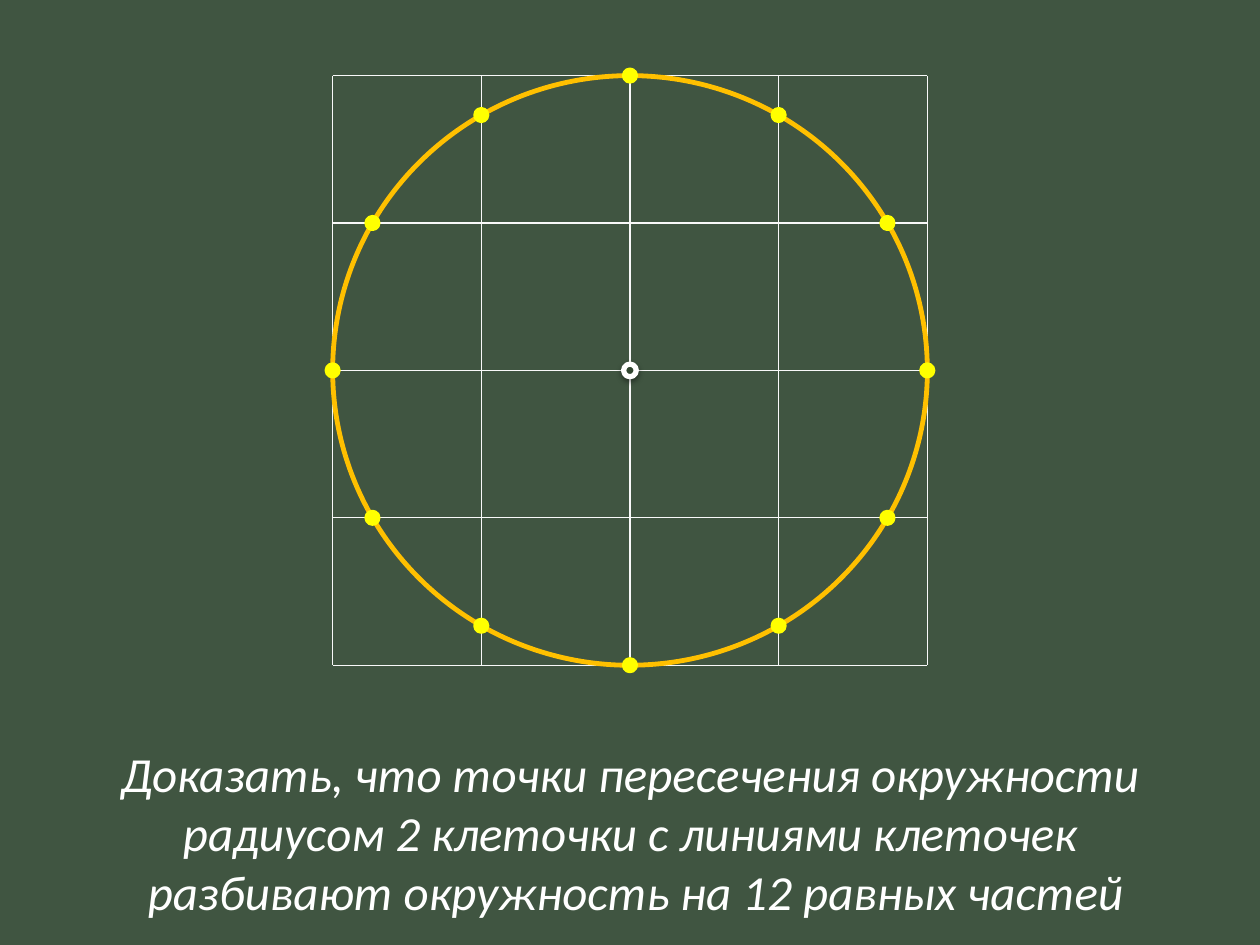
from dataclasses import dataclass
from math import cos, radians, sin

from lxml.etree import SubElement
from pptx import Presentation
from pptx.dml.color import RGBColor
from pptx.enum.shapes import MSO_CONNECTOR, MSO_SHAPE
from pptx.enum.text import MSO_ANCHOR, PP_ALIGN
from pptx.oxml.ns import qn
from pptx.shapes.autoshape import Shape
from pptx.util import Inches, Pt


@dataclass(frozen=True)
class Theme:
    back: str = "405541"
    grid: str = "F9F9F9"
    ring: str = "FFC000"
    dot: str = "FFFF00"
    hub: str = "314630"
    text: str = "FFFFFF"
    font: str = "Calibri"
    size: float = 28
    thin: float = 0.75
    bold: float = 2.75
    rim: float = 2
    hub_rim: float = 3


@dataclass(frozen=True)
class Grid:
    """A square net of cells; lengths are in inches."""
    left: float = 2.64
    top: float = 0.6
    wide: float = 1.18
    high: float = 1.17
    count: int = 4

    def spot(self, col: float, row: float) -> tuple[float, float]:
        return self.left + col * self.wide, self.top + row * self.high


@dataclass(frozen=True)
class Arc:
    """Part of the circle, in degrees clockwise from the right."""
    start: float
    end: float
    color: str
    width: float


THEME = Theme()
GRID = Grid()
RADIUS = 2
PARTS = 12
DOT = 0.1
TASK = ("Доказать, что точки пересечения окружности радиусом 2 клеточки "
        "с линиями клеточек\v разбивают окружность на 12 равных частей")


def color(code: str) -> RGBColor:
    return RGBColor.from_string(code)


def stroke(item, code: str, width: float) -> None:
    item.line.color.rgb = color(code)
    item.line.width = Pt(width)


def draw_line(shapes, start: tuple[float, float], end: tuple[float, float]) -> None:
    ends = [Inches(n) for n in (*GRID.spot(*start), *GRID.spot(*end))]
    line = shapes.add_connector(MSO_CONNECTOR.STRAIGHT, *ends)
    stroke(line, THEME.grid, THEME.thin)
    SubElement(line._element.spPr, qn("a:effectLst"))


def draw_arc(shapes, arc: Arc) -> None:
    box = (GRID.left, GRID.top, GRID.count * GRID.wide, GRID.count * GRID.high)
    shape = shapes.add_shape(MSO_SHAPE.ARC, *map(Inches, box))
    # An adjustment of 1 stands for 100000 units; a degree has 60000.
    shape.adjustments[0] = arc.start * 0.6
    shape.adjustments[1] = arc.end * 0.6
    shape.fill.background()
    stroke(shape, arc.color, arc.width)
    shape.shadow.inherit = False


def draw_dot(shapes, col: float, row: float, fill: str, rim: str, width: float) -> Shape:
    x, y = GRID.spot(col, row)
    box = (x - DOT / 2, y - DOT / 2, DOT, DOT)
    dot = shapes.add_shape(MSO_SHAPE.OVAL, *map(Inches, box))
    dot.fill.solid()
    dot.fill.fore_color.rgb = color(fill)
    stroke(dot, rim, width)
    dot.shadow.inherit = False
    return dot


def add_shadow(shape: Shape) -> None:
    effects = shape._element.spPr.find(qn("a:effectLst"))
    shadow = SubElement(effects, qn("a:outerShdw"), blurRad=str(Pt(3.1)),
                        dist=str(Pt(1.6)), dir="5400000", rotWithShape="0")
    tint = SubElement(shadow, qn("a:srgbClr"), val="000000")
    SubElement(tint, qn("a:alpha"), val="38000")


def draw_grid(shapes) -> None:
    """Draw the net with a thin circle of four quarters inside it."""
    group = shapes.add_group_shape().shapes
    last = GRID.count
    for step in range(last + 1):
        draw_line(group, (0, step), (last, step))
        draw_line(group, (step, 0), (step, last))
    for turn in range(0, 360, 90):
        draw_arc(group, Arc(turn, (turn + 90) % 360, THEME.grid, THEME.thin))


def draw_ring(shapes) -> None:
    step = 360 // PARTS
    turns = range(0, 360, step)
    for turn in turns:
        draw_arc(shapes, Arc(turn, (turn + step) % 360, THEME.ring, THEME.bold))
    mid = GRID.count / 2
    for turn in turns:
        angle = radians(turn)
        draw_dot(shapes, mid + RADIUS * cos(angle), mid + RADIUS * sin(angle),
                 THEME.dot, THEME.dot, THEME.rim)
    add_shadow(draw_dot(shapes, mid, mid, THEME.hub, THEME.text, THEME.hub_rim))


def add_task(shapes, wide: int, high: int) -> None:
    box = shapes.add_textbox(int(wide * 0.03), int(high * 0.77),
                             int(wide * 0.94), int(high * 0.21))
    frame = box.text_frame
    frame.word_wrap = True
    frame.vertical_anchor = MSO_ANCHOR.BOTTOM
    frame.text = TASK
    para = frame.paragraphs[0]
    para.alignment = PP_ALIGN.CENTER
    for run in para.runs:
        run.font.name = THEME.font
        run.font.size = Pt(THEME.size)
        run.font.italic = True
        run.font.color.rgb = color(THEME.text)


def main() -> None:
    deck = Presentation()
    deck.slide_width, deck.slide_height = Inches(10), Inches(7.5)
    slide = deck.slides.add_slide(deck.slide_layouts[6])
    slide.background.fill.solid()
    slide.background.fill.fore_color.rgb = color(THEME.back)
    add_task(slide.shapes, deck.slide_width, deck.slide_height)
    draw_grid(slide.shapes)
    draw_ring(slide.shapes)
    deck.save("out.pptx")


if __name__ == "__main__":
    main()
